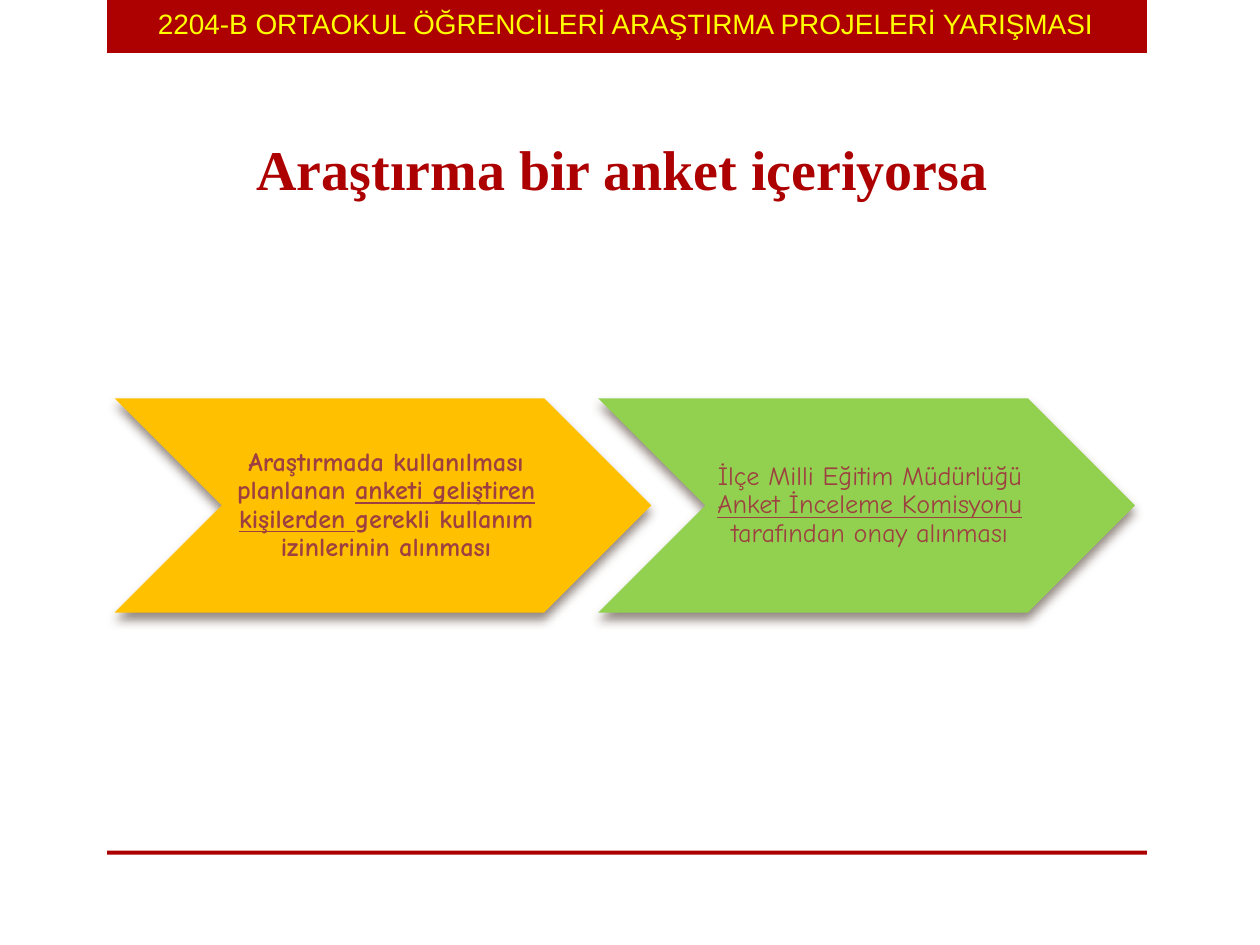
from lxml import etree
from pptx import Presentation
from pptx.dml.color import RGBColor
from pptx.enum.shapes import MSO_SHAPE as Preset
from pptx.enum.text import MSO_ANCHOR as Anchor, PP_ALIGN as Align
from pptx.oxml import parse_xml
from pptx.oxml.ns import nsdecls
from pptx.util import Cm, Pt

COLORS = {
    "red": "AD0101",
    "yellow": "FFFF00",
    "amber": "FFC000",
    "green": "92D050",
    "step_text": "9D4140",
    "shadow": "4E3B30",
}
MARGIN_LEFT, CONTENT_WIDTH = 2.16, 20.96
STEP_LEFT, STEP_TOP, STEP_PITCH = 2.31, 8.03, 9.75
STEP_WIDTH, STEP_HEIGHT = 10.82, 4.32


def write_text(frame, runs, *, font, size, color, bold=False, anchor=Anchor.TOP,
               insets=(0.25, 0.13, 0.25, 0.13), line_spacing=None):
    """Fill a frame with one centred paragraph; runs are (text, underlined) pairs."""
    frame.word_wrap = True
    frame.vertical_anchor = anchor
    (frame.margin_left, frame.margin_top,
     frame.margin_right, frame.margin_bottom) = map(Cm, insets)
    paragraph = frame.paragraphs[0]
    paragraph.alignment = Align.CENTER
    if line_spacing:
        paragraph.line_spacing = line_spacing
    for text, underlined in runs:
        run = paragraph.add_run()
        run.text = text
        run.font.name = font
        run.font.size = Pt(size)
        run.font.bold = bold
        run.font.underline = underlined
        run.font.color.rgb = RGBColor.from_string(COLORS[color])


class SlideBuilder:
    def __init__(self, slide):
        self.slide = slide

    def block(self, preset, left, top, width, height, color):
        shape = self.slide.shapes.add_shape(
            preset, Cm(left), Cm(top), Cm(width), Cm(height))
        shape.shadow.inherit = False
        shape.fill.solid()
        shape.fill.fore_color.rgb = RGBColor.from_string(COLORS[color])
        shape.line.fill.background()
        return shape

    def label(self, left, top, width, height, text, **text_format):
        box = self.slide.shapes.add_textbox(Cm(left), Cm(top), Cm(width), Cm(height))
        write_text(box.text_frame, [(text, False)], **text_format)

    def step(self, index, color, runs, bold):
        chevron = self.block(Preset.CHEVRON, STEP_LEFT + index * STEP_PITCH, STEP_TOP,
                             STEP_WIDTH, STEP_HEIGHT, color)
        self.drop_shadow(chevron)
        write_text(chevron.text_frame, runs, font="Comic Neue", size=15,
                   color="step_text", bold=bold, anchor=Anchor.MIDDLE,
                   insets=(0.18, 0.05, 0.05, 0.05), line_spacing=0.9)

    def drop_shadow(self, shape):
        effects = shape.element.spPr.find(
            "{http://schemas.openxmlformats.org/drawingml/2006/main}effectLst")
        effects.append(parse_xml(
            f'<a:outerShdw {nsdecls("a")} blurRad="{Pt(6)}" dist="{Pt(4)}" '
            f'dir="5400000" rotWithShape="0"><a:srgbClr val="{COLORS["shadow"]}">'
            '<a:alpha val="60000"/></a:srgbClr></a:outerShdw>'))


def main():
    deck = Presentation()
    deck.slide_width, deck.slide_height = Cm(25.4), Cm(19.05)
    builder = SlideBuilder(deck.slides.add_slide(deck.slide_layouts[6]))

    for top, height in ((0, 1.07), (17.15, 0.08)):
        builder.block(Preset.RECTANGLE, MARGIN_LEFT, top, CONTENT_WIDTH, height, "red")

    builder.label(1.7, 2.72, CONTENT_WIDTH, 2.03, "Araştırma bir anket içeriyorsa",
                  font="Times New Roman", size=32, color="red", bold=True,
                  insets=(0.74, 0, 0, 0))

    steps = [
        ("amber", True, [("Araştırmada kullanılması planlanan ", False),
                         ("anketi geliştiren kişilerden ", True),
                         ("gerekli kullanım izinlerinin alınması", False)]),
        ("green", False, [("İlçe Milli Eğitim Müdürlüğü ", False),
                          ("Anket İnceleme Komisyonu ", True),
                          ("tarafından onay alınması", False)]),
    ]
    for index, (color, bold, runs) in enumerate(steps):
        builder.step(index, color, runs, bold)

    builder.label(2.11, 0, 21.01, 0.94,
                  "2204-B ORTAOKUL ÖĞRENCİLERİ ARAŞTIRMA PROJELERİ YARIŞMASI",
                  font="Arial", size=16, color="yellow")
    deck.save("out.pptx")


if __name__ == "__main__":
    main()
